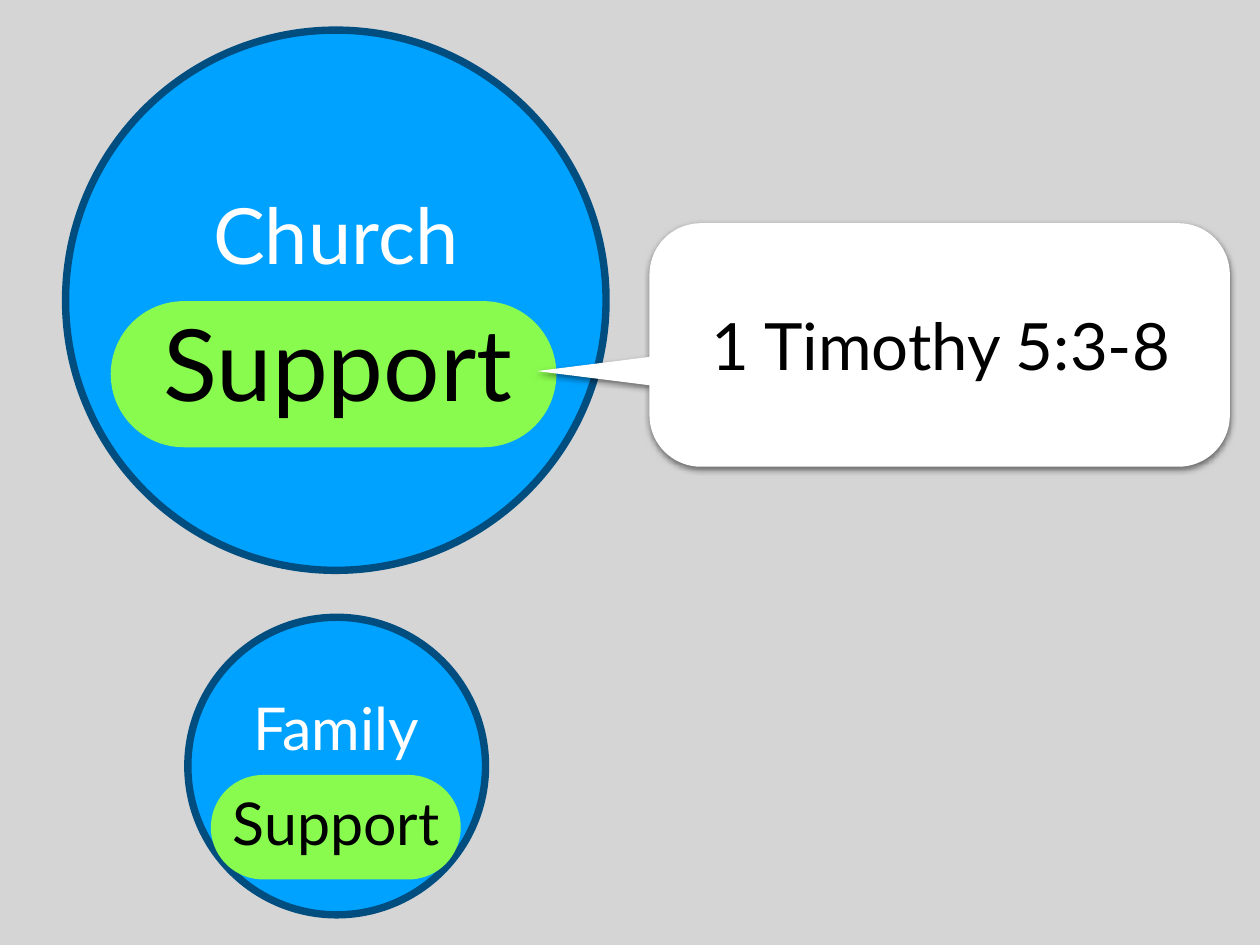
from dataclasses import dataclass
from math import cos, radians, sin

from lxml import etree
from pptx import Presentation
from pptx.dml.color import RGBColor
from pptx.enum.shapes import MSO_SHAPE
from pptx.enum.text import MSO_ANCHOR, MSO_AUTO_SIZE, PP_ALIGN
from pptx.oxml.ns import qn
from pptx.util import Inches, Pt

ELLIPSE = MSO_SHAPE.OVAL
ROUNDED = MSO_SHAPE.ROUNDED_RECTANGLE
CENTER = PP_ALIGN.CENTER
MIDDLE = MSO_ANCHOR.MIDDLE
GROW = MSO_AUTO_SIZE.SHAPE_TO_FIT_TEXT


@dataclass(frozen=True)
class Theme:
    font: str = "Lato"
    background: str = "D5D5D5"
    circle: str = "00A2FF"
    outline: str = "004D80"
    pill: str = "89FA4E"
    light: str = "FFFFFF"
    dark: str = "000000"
    outline_width: int = 6
    huge: int = 81
    large: int = 63
    verse: int = 53
    medium: int = 48


def add_text(box, text, *, font, size, color, wrap=False):
    frame = box.text_frame
    frame.word_wrap = wrap
    frame.auto_size = GROW
    frame.vertical_anchor = MIDDLE
    frame.margin_left = frame.margin_right = Inches(0.06)
    frame.margin_top = frame.margin_bottom = Inches(0.06)
    para = frame.paragraphs[0]
    para.alignment = CENTER
    span = para.add_run()
    span.text = text
    span.font.name = font
    span.font.size = Pt(size)
    span.font.color.rgb = RGBColor.from_string(color)


def add_soft_shadow(shape, color):
    """Cast a half-transparent shadow straight down."""
    effects = etree.SubElement(shape._element.spPr, qn("a:effectLst"))
    shadow = etree.SubElement(
        effects, qn("a:outerShdw"), blurRad=str(Pt(5)), dist=str(Pt(2)),
        dir="5400000", algn="ctr", rotWithShape="0")
    tint = etree.SubElement(shadow, qn("a:srgbClr"), val=color)
    etree.SubElement(tint, qn("a:alpha"), val="50000")


def corner_points(center_x, center_y, radius, start):
    """Points of a clockwise quarter circle from the start angle."""
    angles = [radians(start + step) for step in range(0, 91, 5)]
    return [(center_x + radius * cos(angle), center_y + radius * sin(angle))
            for angle in angles]


class SlideBuilder:
    def __init__(self, slide, theme):
        self.slide = slide
        self.theme = theme

    def background(self):
        fill = self.slide.background.fill
        fill.solid()
        fill.fore_color.rgb = RGBColor.from_string(self.theme.background)

    def paint(self, shape, color, outline=None):
        shape.fill.solid()
        shape.fill.fore_color.rgb = RGBColor.from_string(color)
        if outline:
            shape.line.color.rgb = RGBColor.from_string(outline)
            shape.line.width = Pt(self.theme.outline_width)
        else:
            shape.line.fill.background()

    def circle(self, left, top, diameter):
        shape = self.slide.shapes.add_shape(
            ELLIPSE, Inches(left), Inches(top), Inches(diameter), Inches(diameter))
        shape.shadow.inherit = False
        self.paint(shape, self.theme.circle, self.theme.outline)

    def pill(self, left, top, width, height):
        shape = self.slide.shapes.add_shape(
            ROUNDED, Inches(left), Inches(top), Inches(width), Inches(height))
        shape.adjustments[0] = 0.5
        shape.shadow.inherit = False
        self.paint(shape, self.theme.pill)

    def label(self, text, left, top, width, height, **text_format):
        box = self.slide.shapes.add_textbox(
            Inches(left), Inches(top), Inches(width), Inches(height))
        add_text(box, text, font=self.theme.font, **text_format)

    def callout(self, left, top, right, bottom, radius, tip, tail_half):
        """Rounded box with a tail that points left to the tip."""
        near_x, far_x = left + radius, right - radius
        near_y, far_y = top + radius, bottom - radius
        tip_x, tip_y = tip
        outline = [
            *corner_points(near_x, near_y, radius, 180),
            *corner_points(far_x, near_y, radius, 270),
            *corner_points(far_x, far_y, radius, 0),
            *corner_points(near_x, far_y, radius, 90),
            (left, tip_y + tail_half), (tip_x, tip_y), (left, tip_y - tail_half),
        ]
        start, *rest = [(Inches(x), Inches(y)) for x, y in outline]
        builder = self.slide.shapes.build_freeform(*start)
        builder.add_line_segments(rest, close=True)
        shape = builder.convert_to_shape()
        self.paint(shape, self.theme.light)
        add_soft_shadow(shape, self.theme.dark)


def main():
    deck = Presentation()
    deck.slide_width, deck.slide_height = Inches(14.22), Inches(10.67)
    theme = Theme()
    page = SlideBuilder(deck.slides.add_slide(deck.slide_layouts[6]), theme)

    page.background()
    page.circle(0.74, 0.34, 6.1)
    page.circle(2.12, 6.97, 3.36)
    page.label("Church", 2.26, 1.99, 3.06, 1.29, size=theme.large, color=theme.light)
    page.label("Family", 2.73, 7.7, 2.13, 1.01, size=theme.medium, color=theme.light)

    page.pill(1.25, 3.4, 5.03, 1.65)
    page.label("Support", 1.64, 3.26, 4.35, 1.65, size=theme.huge, color=theme.dark)

    page.callout(7.33, 2.52, 13.88, 5.27, radius=0.58, tip=(6.06, 4.19), tail_half=0.16)
    page.label("1 Timothy 5:3-8", 7.89, 3.33, 5.46, 1.13,
               size=theme.verse, color=theme.dark, wrap=True)

    page.pill(2.38, 8.75, 2.82, 1.18)
    page.label("Support", 2.48, 8.78, 2.63, 1.01, size=theme.medium, color=theme.dark)

    deck.save("out.pptx")


if __name__ == "__main__":
    main()
